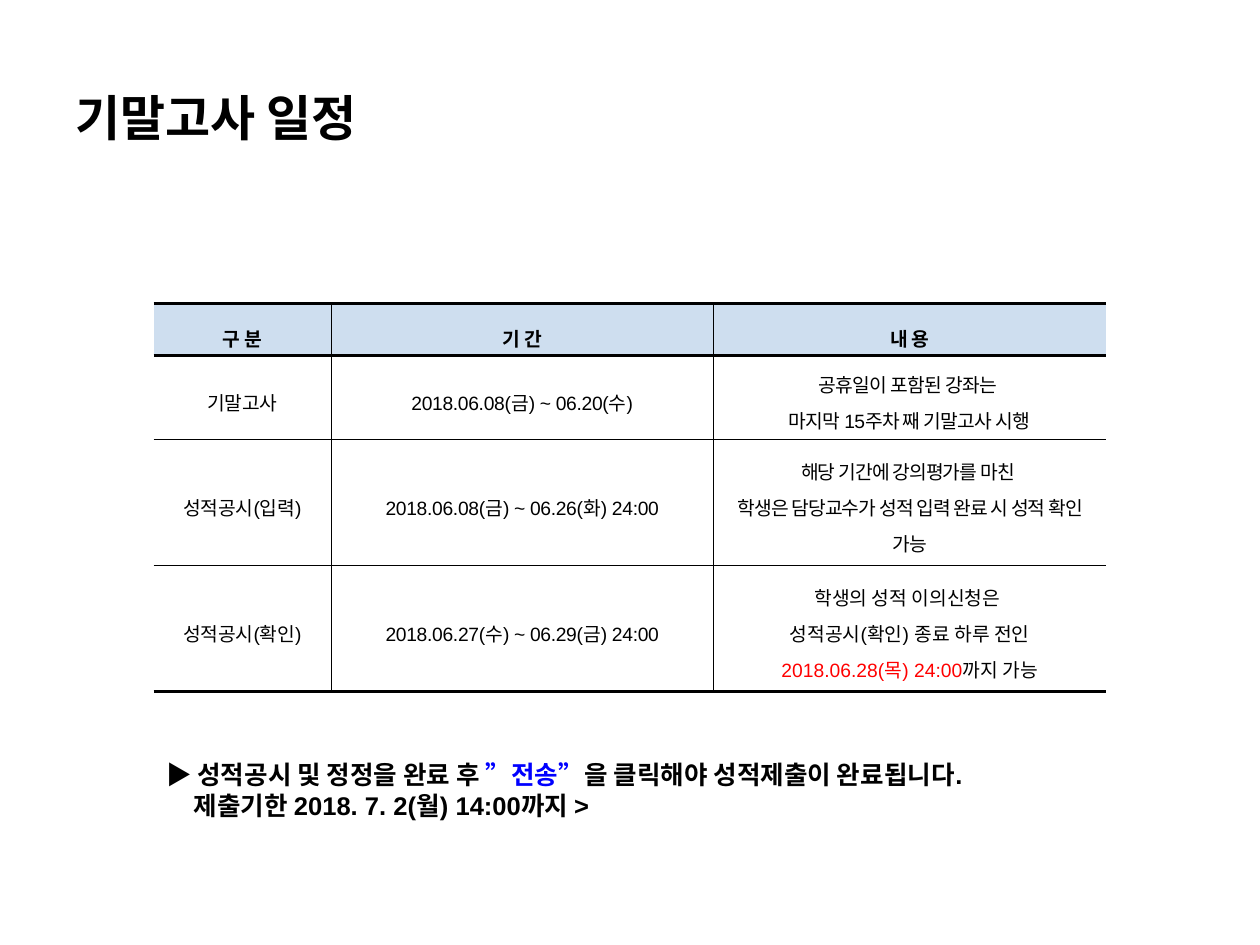
import pptx
import pptx.util
import pptx.dml.color
import pptx.enum.text
import pptx.oxml
import pptx.oxml.ns
import lxml.etree

Inches, Pt = pptx.util.Inches, pptx.util.Pt
ALIGN, ANCHOR = pptx.enum.text.PP_ALIGN, pptx.enum.text.MSO_ANCHOR
COLORS = {"text": "000000", "header": "CEDEEF", "date": "FF0000", "send": "0000FF"}
HANGUL = "Noto Sans CJK KR"
THIN, OUTER, HEADER_RULE = 0.28, 1.7, 1.98


def rgb(name):
    return pptx.dml.color.RGBColor.from_string(COLORS[name])


def add_xml(parent, tag, **attrs):
    el = lxml.etree.SubElement(parent, pptx.oxml.ns.qn(tag))
    for key, value in attrs.items():
        el.set(key, str(value))
    return el


class Deck:
    def __init__(self, prs):
        self.slide = prs.slides.add_slide(prs.slide_layouts[5])

    def run(self, p, text, size, color="text", bold=False, font="Arial", spacing=0):
        r = p.add_run()
        r.text = text
        r.font.name, r.font.size, r.font.bold = font, Pt(size), bold
        r.font.color.rgb = rgb(color)
        rPr = r.font._element
        rPr.set("spc", str(round(spacing * 100)))
        add_xml(rPr, "a:ea", typeface=HANGUL)

    def lines(self, tf, lines, size, align=ALIGN.LEFT, leading=None, **style):
        for i, parts in enumerate(lines):
            p = tf.add_paragraph() if i else tf.paragraphs[0]
            p.alignment, p.line_spacing = align, leading
            for text, color in parts:
                self.run(p, text, size, color, **style)

    def title(self, text, left, top, width, height):
        sp = self.slide.shapes.title
        sp.left, sp.top, sp.width, sp.height = map(Inches, (left, top, width, height))
        sp.text_frame.vertical_anchor = ANCHOR.MIDDLE
        self.lines(sp.text_frame, [[(text, "text")]], 28, bold=True, font=HANGUL)

    def text(self, lines, left, top, width, height, size):
        sp = self.slide.shapes.add_textbox(*map(Inches, (left, top, width, height)))
        tf = sp.text_frame
        tf.word_wrap, tf.vertical_anchor = True, ANCHOR.MIDDLE
        self.lines(tf, lines, size, bold=True)
        return tf

    def borders(self, cell, **widths):
        tcPr = cell._tc.get_or_add_tcPr()
        for side in "LRTB":
            width = widths[side]
            ln = add_xml(tcPr, "a:ln" + side, w=Pt(width))
            if width:
                add_xml(add_xml(ln, "a:solidFill"), "a:srgbClr", val=COLORS["text"])
            else:
                add_xml(ln, "a:noFill")

    def table(self, rows, left, top, widths, heights, rules, spacings):
        shape = self.slide.shapes.add_table(
            len(rows), len(widths), Inches(left), Inches(top),
            Inches(sum(widths)), Inches(sum(heights)))
        table = shape.table
        table.first_row = table.horz_banding = False
        for col, width in zip(table.columns, widths):
            col.width = Inches(width)
        for i, row in enumerate(rows):
            table.rows[i].height = Inches(heights[i])
            for j, lines in enumerate(row):
                cell = table.cell(i, j)
                cell.vertical_anchor = ANCHOR.MIDDLE
                cell.margin_left = cell.margin_right = Inches(0.07)
                cell.margin_top = cell.margin_bottom = Inches(0.02)
                self.borders(cell, L=THIN if j else 0,
                             R=THIN if j < len(widths) - 1 else 0,
                             T=rules[i], B=rules[i + 1])
                if i:
                    cell.fill.background()
                else:
                    cell.fill.solid()
                    cell.fill.fore_color.rgb = rgb("header")
                self.lines(cell.text_frame, lines, 11, ALIGN.CENTER,
                           1.3 if i else 1.6, bold=i == 0,
                           spacing=spacings[i] if j == 2 else -0.2)


def plain(*lines):
    return [[(line, "text")] for line in lines]


def main():
    prs = pptx.Presentation()
    prs.slide_width, prs.slide_height = Inches(10), Inches(7.5)
    deck = Deck(prs)
    deck.title("기말고사 일정", 0.5, 0.3, 9, 1.25)
    rows = [
        [plain("구 분"), plain("기 간"), plain("내 용")],
        [plain("기말고사"), plain("2018.06.08(금) ~ 06.20(수)"),
         plain("공휴일이 포함된 강좌는 ", "마지막 15주차 째 기말고사 시행")],
        [plain("성적공시(입력)"), plain("2018.06.08(금) ~ 06.26(화) 24:00"),
         plain("해당 기간에 강의평가를 마친 ",
               "학생은 담당교수가 성적 입력 완료 시 성적 확인 가능")],
        [plain("성적공시(확인)"), plain("2018.06.27(수) ~ 06.29(금) 24:00"),
         plain("학생의 성적 이의신청은 ", "성적공시(확인) 종료 하루 전인")
         + [[("2018.06.28(목) 24:00", "date"), ("까지 가능", "text")]]],
    ]
    deck.table(rows, 1.22, 2.41, [1.41, 3.03, 3.12], [0.41, 0.67, 1, 1],
               rules=[OUTER, HEADER_RULE, THIN, THIN, OUTER],
               spacings=[-0.2, -0.4, -0.5, 0])
    notice = [
        [("▶ 성적공시 및 정정을 완료 후 ", "text"), ("”전송”", "send"),
         ("을 클릭해야 성적제출이 완료됩니다.", "text")],
        [("제출기한 2018. 7. 2(월) 14:00까지 >", "text")],
    ]
    tf = deck.text(notice, 1.22, 5.72, 7.56, 1.1, 14.6)
    pPr = tf.paragraphs[1]._p.get_or_add_pPr()
    pPr.set("marL", str(Inches(0.22)))
    pPr.set("indent", "0")
    prs.save("out.pptx")


if __name__ == "__main__":
    main()
